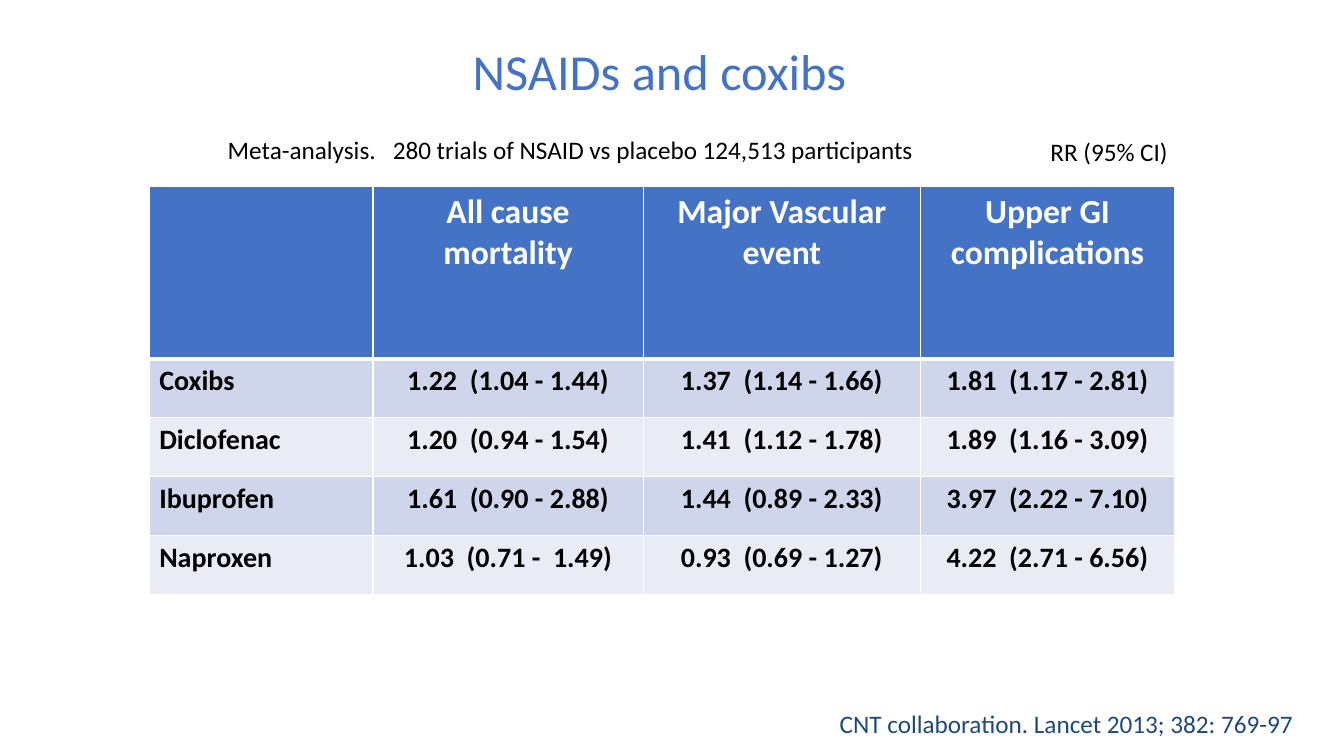
from dataclasses import dataclass

from lxml import etree
from pptx import Presentation
from pptx import util as u
from pptx.dml.color import RGBColor
from pptx.enum import text
from pptx.oxml.ns import qn

PX = 9144  # EMU in one px, at 100 px to the inch


@dataclass(frozen=True)
class Theme:
    font: str = "Calibri"
    accent: str = "4472C4"
    ink: str = "000000"
    light: str = "FFFFFF"
    source: str = "1F497D"
    bands: tuple = ("CFD5EA", "E9EBF5")
    title_size: int = 36
    header_size: int = 24
    body_size: int = 20
    note_size: int = 18
    rule: int = 1
    header_rule: int = 3


THEME = Theme()
HEADERS = ["", "All cause mortality", "Major Vascular event", "Upper GI complications"]
RISKS = [
    ["Coxibs", "1.22  (1.04 - 1.44)", "1.37  (1.14 - 1.66)", "1.81  (1.17 - 2.81)"],
    ["Diclofenac", "1.20  (0.94 - 1.54)", "1.41  (1.12 - 1.78)", "1.89  (1.16 - 3.09)"],
    ["Ibuprofen", "1.61  (0.90 - 2.88)", "1.44  (0.89 - 2.33)", "3.97  (2.22 - 7.10)"],
    ["Naproxen", "1.03  (0.71 -  1.49)", "0.93  (0.69 - 1.27)", "4.22  (2.71 - 6.56)"],
]
COLUMN_WIDTHS = [222, 268, 275, 252]
HEADER_HEIGHT = 171


def to_emu(box):
    return [length * PX for length in box]


def add_span(para, words, size, color, bold=False):
    span = para.add_run()
    span.text = words
    span.font.name = THEME.font
    span.font.size = u.Pt(size)
    span.font.bold = bold
    span.font.color.rgb = RGBColor.from_string(color)


def add_title(page, box, words):
    frame = page.shapes.add_textbox(*to_emu(box)).text_frame
    frame.word_wrap = True
    frame.vertical_anchor = text.MSO_ANCHOR.MIDDLE
    para = frame.paragraphs[0]
    para.alignment = text.PP_ALIGN.CENTER
    para.line_spacing = 0.9
    add_span(para, words, THEME.title_size, THEME.accent)


def add_note(page, box, words, color=THEME.ink):
    frame = page.shapes.add_textbox(*to_emu(box)).text_frame
    frame.word_wrap = False
    frame.auto_size = text.MSO_AUTO_SIZE.SHAPE_TO_FIT_TEXT
    add_span(frame.paragraphs[0], words, THEME.note_size, color)


def set_borders(cell, top, bottom):
    """Draw all four cell edges; must run before the cell is filled."""
    properties = cell._tc.get_or_add_tcPr()
    widths = {"L": THEME.rule, "R": THEME.rule, "T": top, "B": bottom}
    for side, width in widths.items():
        line = etree.SubElement(properties, qn(f"a:ln{side}"), w=str(u.Pt(width)))
        fill = etree.SubElement(line, qn("a:solidFill"))
        etree.SubElement(fill, qn("a:srgbClr"), val=THEME.light)


def add_risk_table(page, box):
    rows = [HEADERS] + RISKS
    table = page.shapes.add_table(len(rows), len(HEADERS), *to_emu(box)).table
    for column, width in zip(table.columns, COLUMN_WIDTHS):
        column.width = width * PX
    body_height = (box[3] - HEADER_HEIGHT) * PX // len(RISKS)
    for r, values in enumerate(rows):
        is_header = r == 0
        table.rows[r].height = HEADER_HEIGHT * PX if is_header else body_height
        size = THEME.header_size if is_header else THEME.body_size
        color = THEME.light if is_header else THEME.ink
        background = THEME.accent if is_header else THEME.bands[(r - 1) % 2]
        top = THEME.header_rule if r == 1 else THEME.rule
        bottom = THEME.header_rule if is_header else THEME.rule
        for c, words in enumerate(values):
            cell = table.cell(r, c)
            set_borders(cell, top, bottom)
            cell.fill.solid()
            cell.fill.fore_color.rgb = RGBColor.from_string(background)
            para = cell.text_frame.paragraphs[0]
            if c > 0:
                para.alignment = text.PP_ALIGN.CENTER
            if words:
                add_span(para, words, size, color, bold=True)


def add_results_page(deck):
    page = deck.slides.add_slide(deck.slide_layouts[6])
    add_title(page, (204, 11, 900, 125), "NSAIDs and coxibs")
    add_note(page, (216, 128, 701, 40),
             "Meta-analysis.   280 trials of NSAID vs placebo 124,513 participants")
    add_risk_table(page, (148, 185, sum(COLUMN_WIDTHS), 405))
    add_note(page, (1032, 130, 144, 40), "RR (95% CI)")
    add_note(page, (823, 698, 475, 40),
             "CNT collaboration. Lancet 2013; 382: 769-97", THEME.source)


def main():
    deck = Presentation()
    deck.slide_width, deck.slide_height = to_emu((1333, 750))
    add_results_page(deck)
    deck.save("out.pptx")


if __name__ == "__main__":
    main()
